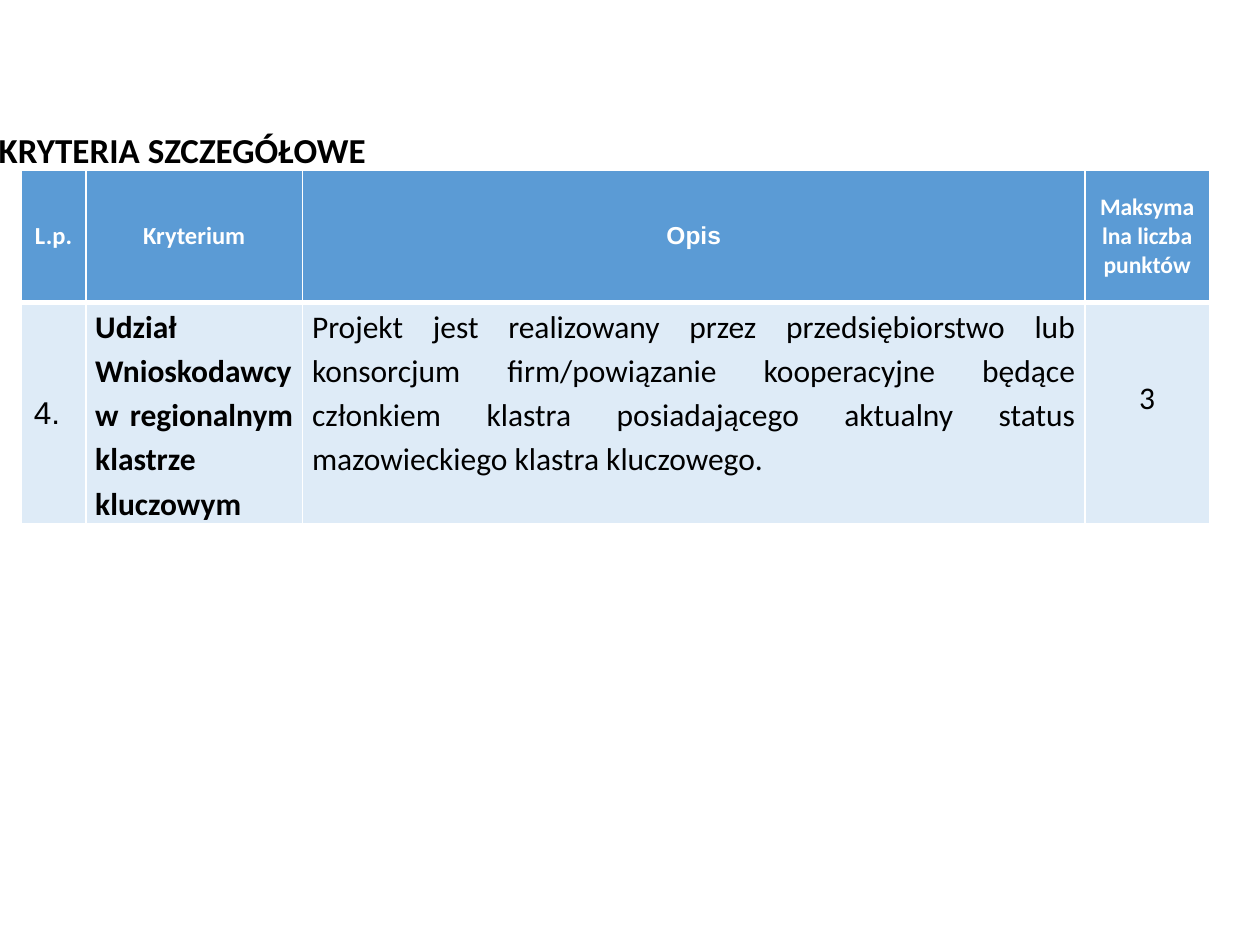
from lxml.etree import SubElement
from pptx import Presentation
from pptx.dml.color import RGBColor
from pptx.enum.text import MSO_ANCHOR, MSO_AUTO_SIZE, PP_ALIGN
from pptx.oxml.ns import qn
from pptx.util import Cm, Pt

COLORS = {"header": "5B9BD5", "body": "DEEBF7", "white": "FFFFFF", "black": "000000"}


def add_run(p, text, size, color, bold=False, font="Calibri"):
    r = p.add_run()
    r.text = text
    r.font.name = font
    r.font.size = Pt(size)
    r.font.bold = bold
    r.font.color.rgb = RGBColor.from_string(COLORS[color])


def style_cell(cell, fill, top, bottom):
    """Set white borders, with top and bottom widths in points, and the fill."""
    tcPr = cell._tc.get_or_add_tcPr()
    for tag, width in (("a:lnL", 1), ("a:lnR", 1), ("a:lnT", top), ("a:lnB", bottom)):
        ln = SubElement(tcPr, qn(tag), w=str(Pt(width)))
        SubElement(SubElement(ln, qn("a:solidFill")), qn("a:srgbClr"), val=COLORS["white"])
    cell.fill.solid()
    cell.fill.fore_color.rgb = RGBColor.from_string(COLORS[fill])


prs = Presentation()
prs.slide_width, prs.slide_height = Cm(25.4), Cm(19.05)
s = prs.slides.add_slide(prs.slide_layouts[5])

# Title
title = s.shapes.title
title.left, title.top, title.width, title.height = Cm(-0.28), Cm(1.02), Cm(23.65), Cm(4.09)
tf = title.text_frame
tf.auto_size = MSO_AUTO_SIZE.NONE
tf.vertical_anchor = MSO_ANCHOR.MIDDLE
p = tf.paragraphs[0]
p.alignment = PP_ALIGN.LEFT
p.line_spacing = 0.9
add_run(p, "KRYTERIA SZCZEGÓŁOWE", 20, "black", bold=True)

# Criteria table
widths = [1.3, 4.37, 15.77, 2.51]
heights = [2.67, 4.4]
table = s.shapes.add_table(2, 4, Cm(0.43), Cm(3.43), Cm(sum(widths)), Cm(sum(heights))).table
for column, width in zip(table.columns, widths):
    column.width = Cm(width)
for row, height in zip(table.rows, heights):
    row.height = Cm(height)

headers = [
    ("L.p.", 14, "Calibri"),
    ("Kryterium", 14, "Calibri"),
    ("Opis", 14, "Arial"),
    ("Maksymalna liczba punktów", 13.5, "Calibri"),
]
for cell, (text, size, font) in zip(table.rows[0].cells, headers):
    style_cell(cell, "header", 1, 3)
    cell.vertical_anchor = MSO_ANCHOR.MIDDLE
    p = cell.text_frame.paragraphs[0]
    p.alignment = PP_ALIGN.CENTER
    add_run(p, text, size, "white", bold=True, font=font)

number, criterion, description, points = table.rows[1].cells
for cell in (number, criterion, description, points):
    style_cell(cell, "body", 3, 1)

number.vertical_anchor = MSO_ANCHOR.MIDDLE
add_run(number.text_frame.paragraphs[0], "4.", 18, "black", font="Arial")

for cell, text, bold in (
    (criterion, "Udział Wnioskodawcy w regionalnym klastrze kluczowym", True),
    (description, "Projekt jest realizowany przez przedsiębiorstwo lub konsorcjum "
     "firm/powiązanie kooperacyjne będące członkiem klastra posiadającego aktualny "
     "status mazowieckiego klastra kluczowego.", False),
):
    cell.margin_left = cell.margin_right = Cm(0.19)
    cell.margin_top = cell.margin_bottom = Cm(0)
    p = cell.text_frame.paragraphs[0]
    p.alignment = PP_ALIGN.JUSTIFY
    p.line_spacing = 1.15
    add_run(p, text, 18, "black", bold=bold)

points.vertical_anchor = MSO_ANCHOR.MIDDLE
points.margin_left = points.margin_right = points.margin_top = Cm(0.1)
points.margin_bottom = Cm(0.8)
p = points.text_frame.paragraphs[0]
p.alignment = PP_ALIGN.CENTER
p.line_spacing = 1.15
add_run(p, "3", 18, "black")

prs.save("out.pptx")
